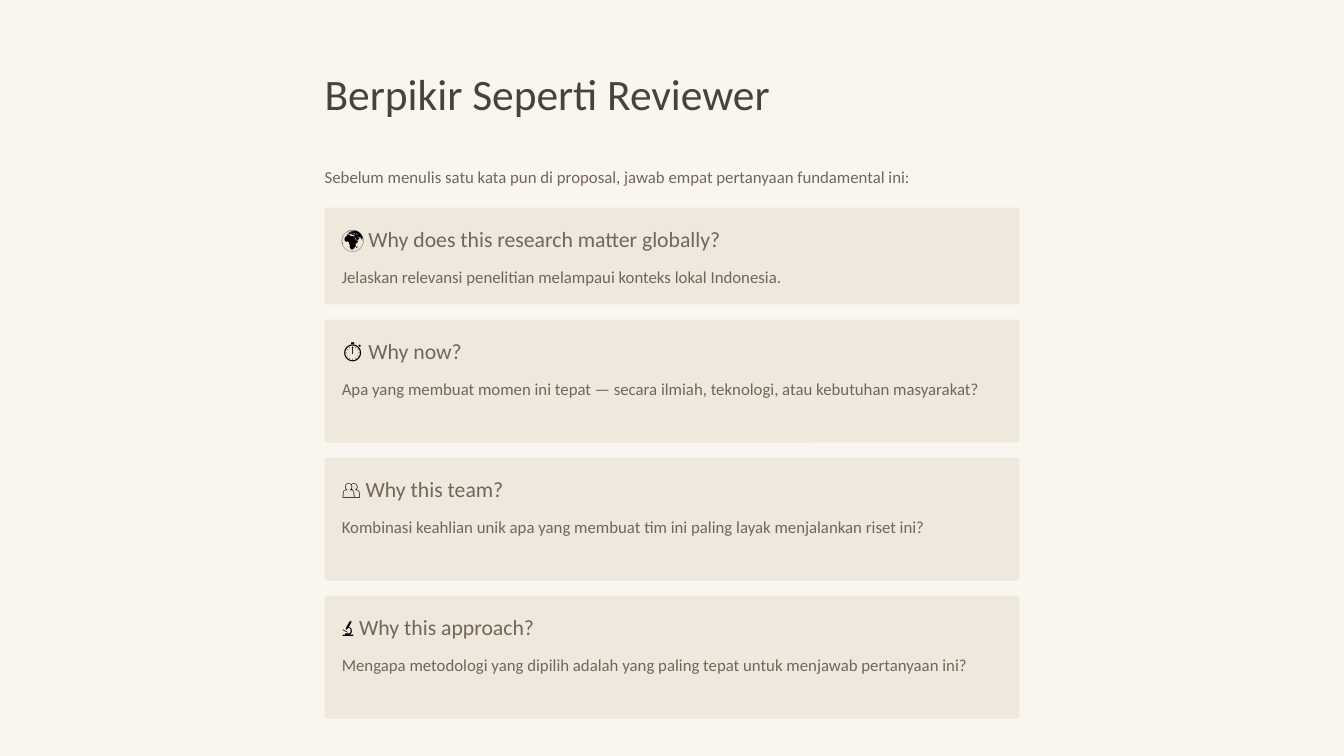
import pptx
import pptx.util
import pptx.dml.color
import pptx.enum.shapes
import pptx.enum.text

Inches = pptx.util.Inches
hues = {"page": "F9F6F0", "card": "EEE8DD", "title": "484237",
        "text": "746558", "icon": "000000"}


def paint(fill, hue):
    fill.solid()
    fill.fore_color.rgb = pptx.dml.color.RGBColor.from_string(hues[hue])


def write(text, box, size=12, hue="text", font="Calibri", space=1.22):
    """Append a run of text to the first paragraph of a box."""
    frame = box.text_frame
    frame.word_wrap = True
    frame.auto_size = pptx.enum.text.MSO_AUTO_SIZE.NONE
    frame.vertical_anchor = pptx.enum.text.MSO_ANCHOR.TOP
    frame.margin_left = frame.margin_right = 0
    frame.margin_top = frame.margin_bottom = 0
    line = frame.paragraphs[0]
    line.alignment = pptx.enum.text.PP_ALIGN.LEFT
    line.line_spacing = space
    run = line.add_run()
    run.text = text
    run.font.size = pptx.util.Pt(size)
    run.font.name = font
    paint(run.font.fill, hue)


deck = pptx.Presentation()
deck.slide_width, deck.slide_height = Inches(13.33), Inches(7.5)
slide = deck.slides.add_slide(deck.slide_layouts[5])
shapes = slide.shapes
paint(slide.background.fill, "page")

# Title and lead-in
left, width = 3.22, 6.89
title = shapes.title
title.left, title.top = Inches(left), Inches(0.65)
title.width, title.height = Inches(6.19), Inches(0.54)
write("Berpikir Seperti Reviewer", title, size=31, hue="title", space=1.04)

intro = shapes.add_textbox(Inches(left), Inches(1.61), Inches(7.55), Inches(0.25))
write("Sebelum menulis satu kata pun di proposal, jawab empat pertanyaan "
      "fundamental ini:", intro)

# Question cards: icon, question, prompt, card height
cards = [
    ("🌍", "Why does this research matter globally?",
     "Jelaskan relevansi penelitian melampaui konteks lokal Indonesia.", 0.96),
    ("⏱", "Why now?",
     "Apa yang membuat momen ini tepat — secara ilmiah, teknologi, atau "
     "kebutuhan masyarakat?", 1.22),
    ("👥", "Why this team?",
     "Kombinasi keahlian unik apa yang membuat tim ini paling layak "
     "menjalankan riset ini?", 1.22),
    ("🔬", "Why this approach?",
     "Mengapa metodologi yang dipilih adalah yang paling tepat untuk "
     "menjawab pertanyaan ini?", 1.22),
]
top, gap, pad, round_by = 2.06, 0.15, 0.17, 0.03
inner = width - 2 * pad

for icon, ask, hint, tall in cards:
    card = shapes.add_shape(
        pptx.enum.shapes.MSO_SHAPE.ROUNDED_RECTANGLE,
        Inches(left), Inches(top), Inches(width), Inches(tall))
    card.adjustments[0] = round_by / tall
    card.shadow.inherit = False
    card.line.fill.background()
    paint(card.fill, "card")

    head = shapes.add_textbox(Inches(left + pad), Inches(top + pad),
                              Inches(inner), Inches(0.28))
    write(icon, head, size=15.5, hue="icon", font="Roboto", space=1.04)
    write(" " + ask, head, size=15.5, space=1.04)

    body = shapes.add_textbox(Inches(left + pad), Inches(top + 0.54),
                              Inches(inner), Inches(tall - 0.54 - pad))
    write(hint, body)
    top += tall + gap

deck.save("out.pptx")
